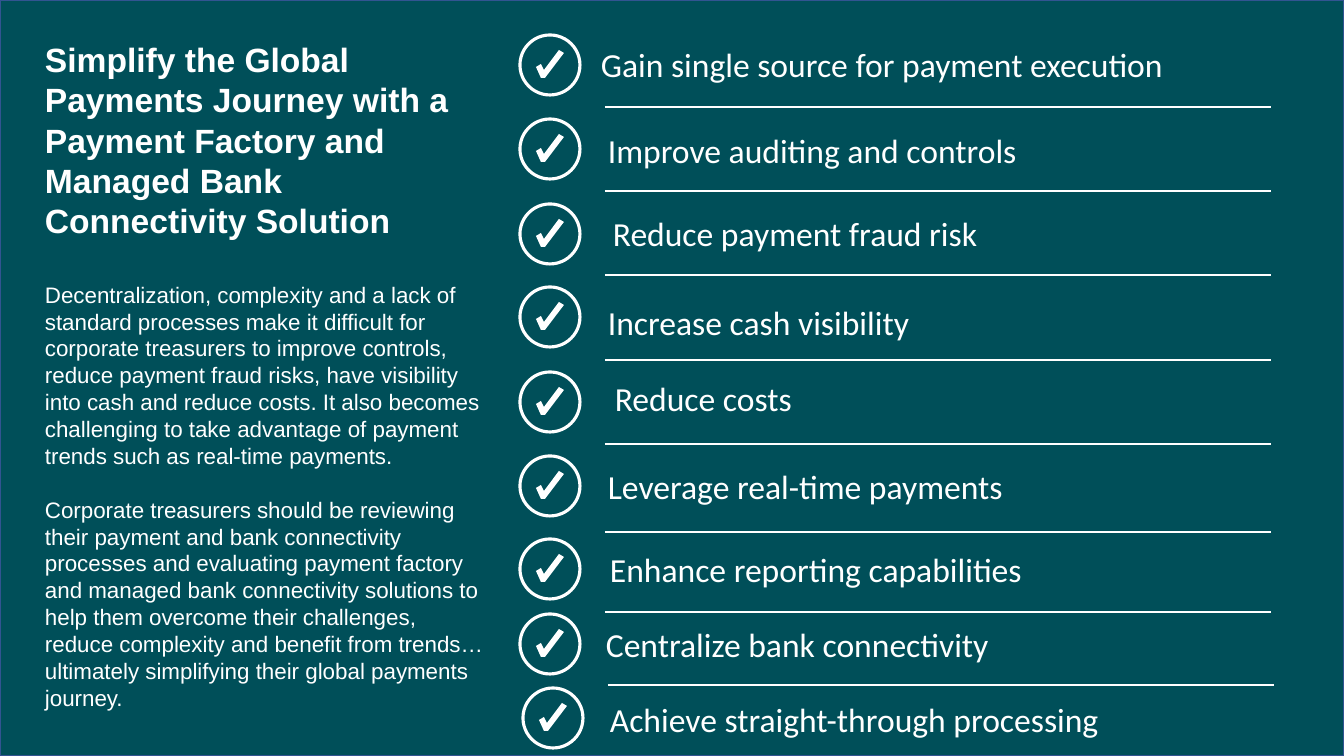
from pptx import Presentation
from pptx.dml.color import RGBColor
from pptx.enum.shapes import MSO_CONNECTOR, MSO_SHAPE
from pptx.enum.text import MSO_ANCHOR
from pptx.oxml.ns import qn
from pptx.util import Emu, Pt
from lxml.etree import SubElement

# Content: text, size, bold, space before (pt)
INTRO = [
    ("Simplify the Global Payments Journey with a Payment Factory and "
     "Managed Bank Connectivity Solution", 24, True, 0),
    ("Decentralization, complexity and a lack of standard processes make it "
     "difficult for corporate treasurers to improve controls, reduce payment "
     "fraud risks, have visibility into cash and reduce costs. It also becomes "
     "challenging to take advantage of payment trends such as real-time "
     "payments.", 16, False, 28.8),
    ("Corporate treasurers should be reviewing their payment and bank "
     "connectivity processes and evaluating payment factory and managed bank "
     "connectivity solutions to help them overcome their challenges, reduce "
     "complexity and benefit from trends…ultimately simplifying their global "
     "payments journey.", 16, False, 19.2),
]

# Benefit: text, text left, text top, badge left, badge top
BENEFITS = [
    ("Gain single source for payment execution", 591, 39, 519, 34),
    ("Improve auditing and controls", 598, 125, 519, 118),
    ("Reduce payment fraud risk", 603, 208, 519, 203),
    ("Increase cash visibility", 598, 297, 519, 286),
    ("Reduce costs", 605, 373, 519, 371),
    ("Leverage real-time payments", 598, 461, 519, 455),
    ("Enhance reporting capabilities", 600, 544, 519, 538),
    ("Centralize bank connectivity", 596, 619, 519, 613),
    ("Achieve straight-through processing", 600, 694, 522, 687),
]
# Divider: left, height on the slide
DIVIDERS = [(605, 107), (605, 191), (605, 275), (605, 360), (605, 444),
            (605, 532), (605, 612), (608, 685)]
DIVIDER_W = 666
TICK = [(22, 44), (26, 44), (45, 19), (40, 16), (25, 36), (22, 30), (17, 33)]
RING = 60

COLORS = {"teal": "004F59", "edge": "325491", "white": "FFFFFF"}
SLIDE_W, SLIDE_H = 1344, 756
EMU_PER_PX = 914400 / 100.8


def px(n):
    return Emu(round(n * EMU_PER_PX))


def color(name):
    return RGBColor.from_string(COLORS[name])


def style(sp, fill, line=None, width=1):
    sp.shadow.inherit = False
    if fill:
        sp.fill.solid()
        sp.fill.fore_color.rgb = color(fill)
    else:
        sp.fill.background()
    if line:
        sp.line.color.rgb = color(line)
        sp.line.width = Pt(width)
    else:
        sp.line.fill.background()


def add_text(slide, box, paragraphs, font, anchor, spacing=None):
    tf = slide.shapes.add_textbox(*map(px, box)).text_frame
    tf.word_wrap = True
    tf.vertical_anchor = anchor
    for i, (text, size, bold, before) in enumerate(paragraphs):
        p = tf.add_paragraph() if i else tf.paragraphs[0]
        p.text = text
        p.space_before = Pt(before)
        if spacing:
            p.line_spacing = spacing
        p.font.name, p.font.size, p.font.bold = font, Pt(size), bold
        p.font.color.rgb = color("white")


def add_divider(slide, left, y):
    line = slide.shapes.add_connector(
        MSO_CONNECTOR.STRAIGHT, px(left), px(y), px(left + DIVIDER_W), px(y))
    line.line.color.rgb = color("white")
    line.line.width = Pt(1)
    SubElement(line._element.spPr, qn("a:effectLst"))


def add_badge(slide, left, top):
    badge = slide.shapes.add_group_shape()
    points = [(left + x, top + y) for x, y in TICK]
    builder = badge.shapes.build_freeform(*points[0], scale=EMU_PER_PX)
    builder.add_line_segments(points[1:], close=True)
    style(builder.convert_to_shape(), "white")
    ring = badge.shapes.add_shape(
        MSO_SHAPE.OVAL, px(left + 1), px(top + 1), px(RING), px(RING))
    style(ring, None, "white", 2.25)


def main():
    prs = Presentation()
    prs.slide_width, prs.slide_height = px(SLIDE_W), px(SLIDE_H)
    slide = prs.slides.add_slide(prs.slide_layouts[6])

    # Backdrop
    backdrop = slide.shapes.add_shape(
        MSO_SHAPE.RECTANGLE, 0, 0, px(SLIDE_W), px(SLIDE_H))
    style(backdrop, "teal", "edge")

    # Introduction on the left
    add_text(slide, (35, 34, 463, 716), INTRO, "Arial", MSO_ANCHOR.TOP)

    # Checklist on the right
    for left, y in DIVIDERS:
        add_divider(slide, left, y)
    for text, left, top, badge_left, badge_top in BENEFITS:
        add_text(slide, (left, top, 654, 50), [(text, 24, False, 0)],
                 "Calibri", MSO_ANCHOR.MIDDLE)
        add_badge(slide, badge_left, badge_top)

    prs.save("out.pptx")


if __name__ == "__main__":
    main()
